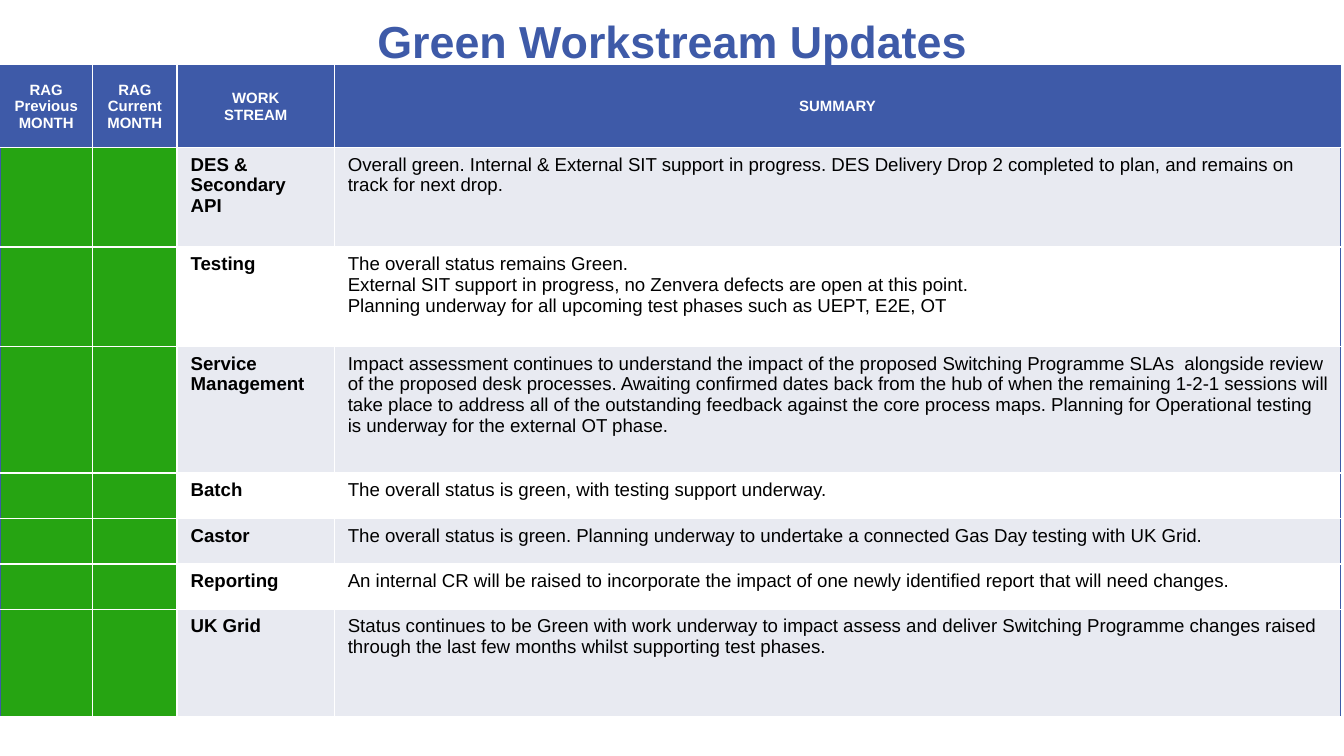
import lxml.etree
import pptx
import pptx.dml.color
import pptx.enum.text
import pptx.oxml.ns
import pptx.util

Cm = pptx.util.Cm
Pt = pptx.util.Pt
RGBColor = pptx.dml.color.RGBColor

BLUE = RGBColor(0x3E, 0x5A, 0xA8)
GREEN = RGBColor(0x26, 0xA4, 0x12)
BAND = RGBColor(0xE8, 0xEA, 0xF1)
WHITE = RGBColor(0xFF, 0xFF, 0xFF)
BLACK = RGBColor(0x00, 0x00, 0x00)

FONT = "Arial"
COLUMN_WIDTHS = [1.75, 1.6, 2.97, 19.02]
HEADER_HEIGHT = 1.55
HEADERS = ["RAG\nPrevious\nMONTH", "RAG\nCurrent\nMONTH", "WORK\nSTREAM", "SUMMARY"]

# Work stream, summary, row height in cm, space around paragraphs in points
WORK_STREAMS = [
    ("DES & Secondary API",
     "Overall green. Internal & External SIT support in progress. DES Delivery Drop 2 "
     "completed to plan, and remains on track for next drop.", 1.88, 0),
    ("Testing",
     "The overall status remains Green.\n"
     "External SIT support in progress, no Zenvera defects are open at this point.\n"
     "Planning underway for all upcoming test phases such as UEPT, E2E, OT", 1.88, 0),
    ("Service Management",
     "Impact assessment continues to understand the impact of the proposed Switching "
     "Programme SLAs  alongside review of the proposed desk processes. Awaiting confirmed "
     "dates back from the hub of when the remaining 1-2-1 sessions will take place to "
     "address all of the outstanding feedback against the core process maps. Planning for "
     "Operational testing is underway for the external OT phase.", 2.39, 0.8),
    ("Batch", "The overall status is green, with testing support underway.", 0.86, 0.8),
    ("Castor",
     "The overall status is green. Planning underway to undertake a connected Gas Day "
     "testing with UK Grid.", 0.86, 0.8),
    ("Reporting",
     "An internal CR will be raised to incorporate the impact of one newly identified "
     "report that will need changes.", 0.86, 0),
    ("UK Grid",
     "Status continues to be Green with work underway to impact assess and deliver "
     "Switching Programme changes raised through the last few months whilst supporting "
     "test phases.", 2.03, 0),
]


def format_paragraph(paragraph, size, color, bold, alignment, spacing=0):
    paragraph.alignment = alignment
    paragraph.space_before = paragraph.space_after = Pt(spacing)
    font = paragraph.font
    font.name = FONT
    font.size = Pt(size)
    font.bold = bold
    font.color.rgb = color


def fill_cell(cell, color):
    cell.fill.solid()
    cell.fill.fore_color.rgb = color


def write_cell(cell, text, *paragraph_format):
    cell.text_frame.text = text
    for paragraph in cell.text_frame.paragraphs:
        format_paragraph(paragraph, *paragraph_format)


def add_border(cell, side, color, width):
    """Draw one side (L, R, T or B); call before the cell is filled."""
    properties = cell._tc.get_or_add_tcPr()
    qn = pptx.oxml.ns.qn
    line = lxml.etree.SubElement(properties, qn(f"a:ln{side}"), w=str(Pt(width)))
    fill = lxml.etree.SubElement(line, qn("a:solidFill"))
    lxml.etree.SubElement(fill, qn("a:srgbClr"), val=str(color))


def add_borders(table):
    """White grid lines inside, thin blue lines at the left, top and right edges."""
    last_column = len(table.columns) - 1
    for row_index, row in enumerate(table.rows):
        for column_index, cell in enumerate(row.cells):
            outer_sides = {
                "L": column_index == 0,
                "R": column_index == last_column,
                "T": row_index == 0,
                "B": False,
            }
            for side, is_outer in outer_sides.items():
                color, width = (BLUE, 0.5) if is_outer else (WHITE, 1)
                add_border(cell, side, color, width)


def fill_header(row):
    row.height = Cm(HEADER_HEIGHT)
    for cell, text in zip(row.cells, HEADERS):
        cell.vertical_anchor = pptx.enum.text.MSO_ANCHOR.MIDDLE
        write_cell(cell, text, 8, WHITE, True, pptx.enum.text.PP_ALIGN.CENTER)
        fill_cell(cell, BLUE)


def fill_work_stream(row, name, summary, height, spacing, background):
    row.height = Cm(height)
    texts = ["", "", name, summary]
    fills = [GREEN, GREEN, background, background]
    for cell, text, color in zip(row.cells, texts, fills):
        is_bold = text == name
        write_cell(cell, text, 10, BLACK, is_bold, pptx.enum.text.PP_ALIGN.LEFT, spacing)
        fill_cell(cell, color)


def add_status_table(slide):
    height = HEADER_HEIGHT + sum(stream[2] for stream in WORK_STREAMS)
    frame = slide.shapes.add_table(
        len(WORK_STREAMS) + 1, len(COLUMN_WIDTHS),
        Cm(0), Cm(1.24), Cm(sum(COLUMN_WIDTHS)), Cm(height))
    table = frame.table
    for column, width in zip(table.columns, COLUMN_WIDTHS):
        column.width = Cm(width)
    add_borders(table)
    header, *rows = table.rows
    fill_header(header)
    for index, (row, stream) in enumerate(zip(rows, WORK_STREAMS)):
        fill_work_stream(row, *stream, WHITE if index % 2 else BAND)


def place_title(slide, text):
    title = slide.shapes.title
    title.left, title.top, title.width, title.height = Cm(1.27), Cm(0), Cm(22.86), Cm(1.55)
    title.text_frame.text = text
    title.text_frame.vertical_anchor = pptx.enum.text.MSO_ANCHOR.MIDDLE
    format_paragraph(title.text_frame.paragraphs[0], 24, BLUE, True,
                     pptx.enum.text.PP_ALIGN.CENTER)
    # The title lies in front of the table
    slide.shapes._spTree.append(title._element)


def main():
    presentation = pptx.Presentation()
    presentation.slide_width = Cm(25.4)
    presentation.slide_height = Cm(14.29)
    slide = presentation.slides.add_slide(presentation.slide_layouts[5])
    add_status_table(slide)
    place_title(slide, "Green Workstream Updates")
    presentation.save("out.pptx")


if __name__ == "__main__":
    main()
